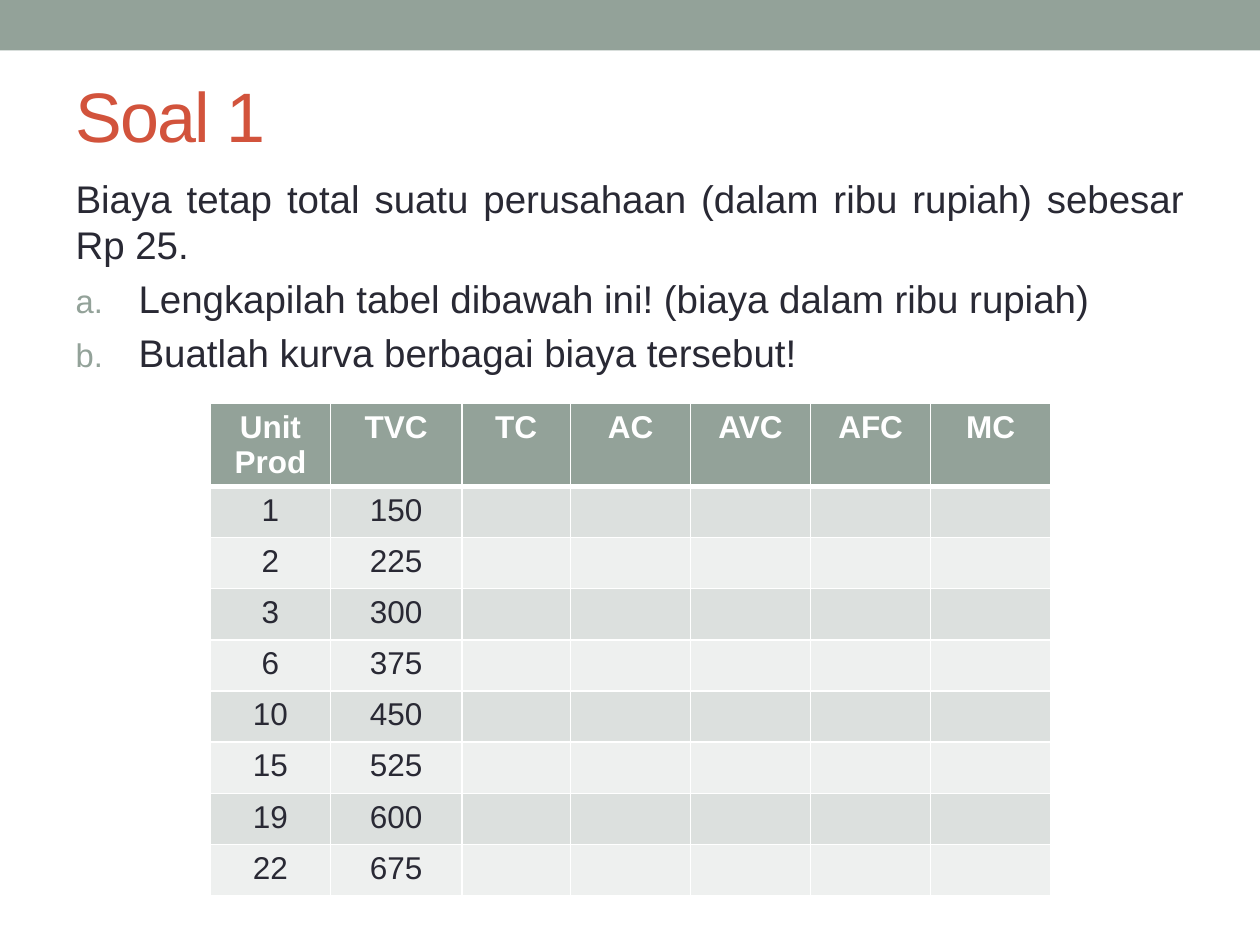
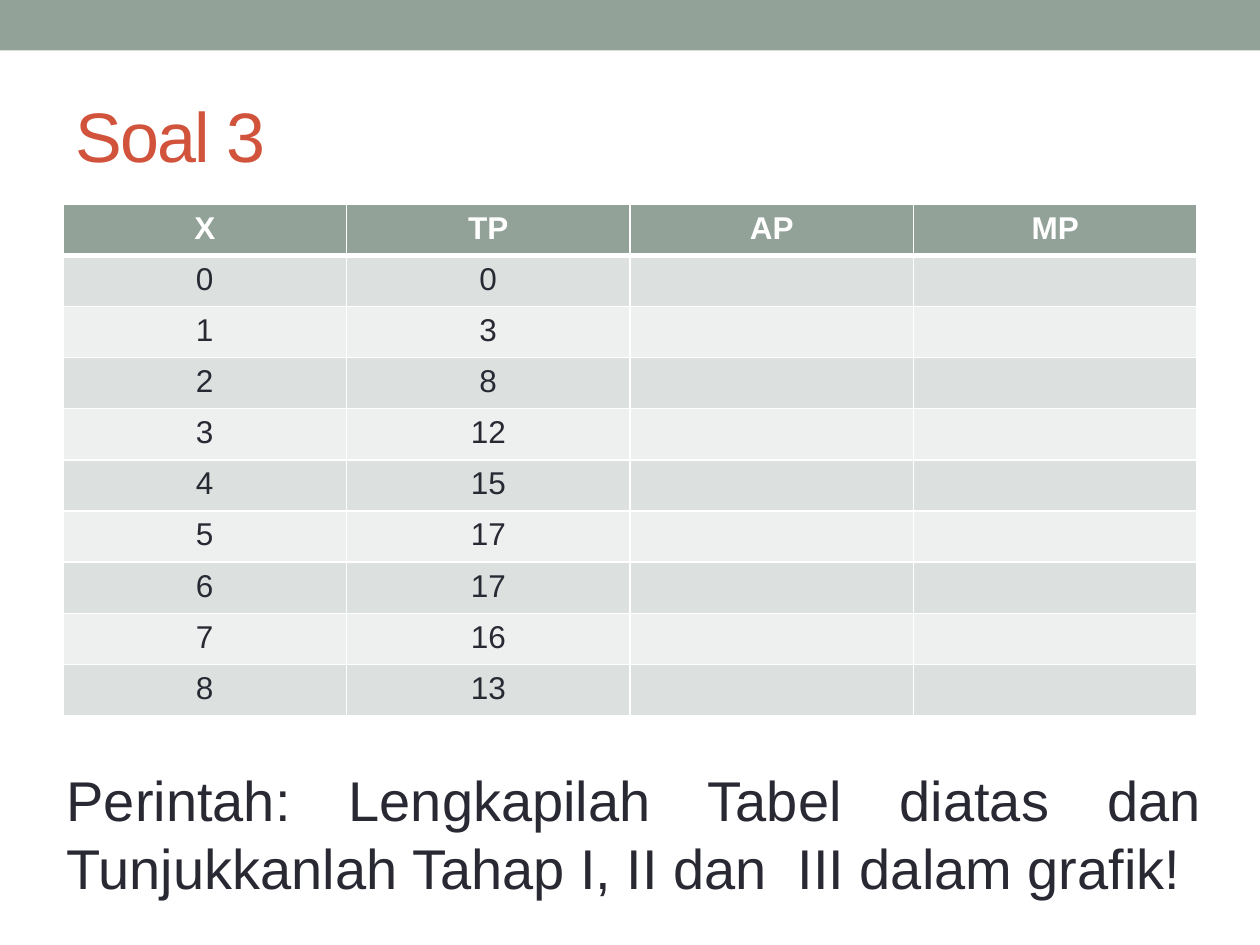
import pptx
import pptx.util
import pptx.dml.color
import pptx.enum.shapes
import pptx.enum.text
import pptx.oxml.ns
import lxml.etree
from dataclasses import dataclass

Inches, Pt = pptx.util.Inches, pptx.util.Pt
Align, Anchor = pptx.enum.text.PP_ALIGN, pptx.enum.text.MSO_ANCHOR
WIDE, HIGH = 10, 7.5
ROW = 4.06 / 10


@dataclass(frozen=True)
class Theme:
    font: str = "Arial"
    sage: str = "93A299"
    red: str = "D2533C"
    ink: str = "292934"
    white: str = "FFFFFF"
    bands: tuple = ("DCE0DE", "EEF0EF")
    title: int = 40
    body: int = 22
    cell: int = 18
    task: int = 32


THEME = Theme()


def color(code):
    return pptx.dml.color.RGBColor.from_string(code)


def area(x, y, w, h):
    """Turn shares of the slide into lengths."""
    return [Inches(v) for v in (x * WIDE, y * HIGH, w * WIDE, h * HIGH)]


def node(parent, tag, **attrs):
    item = lxml.etree.SubElement(parent, pptx.oxml.ns.qn(tag))
    for key, value in attrs.items():
        item.set(key, str(value))
    return item


def place(shape, box):
    shape.left, shape.top, shape.width, shape.height = area(*box)


# Text
def write(para, text, size, tint=THEME.ink, bold=False, align=Align.LEFT,
          track=0, before=None):
    run = para.add_run()
    run.text = text
    run.font.name, run.font.size, run.font.bold = THEME.font, Pt(size), bold
    run.font.color.rgb = color(tint)
    if track:
        run.font._element.set("spc", str(track * 100))
    para.alignment = align
    if before is not None:
        para.space_before = Pt(before)


def mark(para, listed):
    """Letter a list item, or clear the bullet of plain text."""
    props = para._p.get_or_add_pPr()
    indent = Inches(0.5) if listed else 0
    props.set("marL", str(indent))
    props.set("indent", str(-indent))
    if listed:
        node(node(props, "a:buClr"), "a:srgbClr", val=THEME.sage)
        node(props, "a:buSzPct", val=85000)
        node(props, "a:buFont", typeface=THEME.font)
        node(props, "a:buAutoNum", type="alphaLcPeriod")
    else:
        node(props, "a:buNone")


def head(slide, text, top):
    title = slide.shapes.title
    place(title, (0.05, top, 0.9, 0.145))
    frame = title.text_frame
    frame.auto_size = pptx.enum.text.MSO_AUTO_SIZE.NONE
    frame.vertical_anchor = Anchor.MIDDLE
    write(frame.paragraphs[0], text, THEME.title, THEME.red, track=-1)


def body(slide, lead, items):
    holder = slide.placeholders[1]
    place(holder, (0.05, 1.34 / HIGH, 0.9, 5.88 / HIGH))
    frame = holder.text_frame
    frame.auto_size = pptx.enum.text.MSO_AUTO_SIZE.NONE
    for i, text in enumerate([lead, *items]):
        para = frame.add_paragraph() if i else frame.paragraphs[0]
        mark(para, i > 0)
        write(para, text, THEME.body, align=Align.JUSTIFY,
              before=THEME.body * 0.2 if i else 0)


def note(slide, text, box):
    frame = slide.shapes.add_textbox(*area(*box)).text_frame
    frame.word_wrap = True
    write(frame.paragraphs[0], text, THEME.task, align=Align.JUSTIFY)


# Table
def edge(cell, heavy):
    props = cell._tc.get_or_add_tcPr()
    for side in "LRTB":
        width = 3 if side == heavy else 1
        line = node(props, "a:ln" + side, w=Pt(width))
        node(node(line, "a:solidFill"), "a:srgbClr", val=THEME.white)


def grid(slide, names, rows, box, parts):
    """Fill the leading columns and leave the others open for answers."""
    left, top, width, height = area(*box)
    table = slide.shapes.add_table(
        len(rows) + 1, len(names), left, top, width, height).table
    for column, part in zip(table.columns, parts):
        column.width = int(width * part / sum(parts))
    first = height - Inches(ROW) * len(rows)
    for r, values in enumerate([names, *rows]):
        table.rows[r].height = Inches(ROW) if r else first
        for c in range(len(names)):
            cell = table.cell(r, c)
            edge(cell, "T" if r == 1 else "" if r else "B")
            cell.fill.solid()
            cell.fill.fore_color.rgb = color(
                THEME.bands[(r - 1) % 2] if r else THEME.sage)
            if c < len(values):
                write(cell.text_frame.paragraphs[0], str(values[c]),
                      THEME.cell, THEME.ink if r else THEME.white,
                      bold=not r, align=Align.CENTER)


# Shared start of each slide: band behind, title above
def start(deck, layout, text, top):
    slide = deck.slides.add_slide(deck.slide_layouts[layout])
    bar = slide.shapes.add_shape(
        pptx.enum.shapes.MSO_SHAPE.RECTANGLE, *area(0, 0, 1, 0.4 / HIGH))
    bar.shadow.inherit = False
    bar.fill.solid()
    bar.fill.fore_color.rgb = color(THEME.sage)
    bar.line.fill.background()
    slide.shapes.element.insert(2, bar.element)
    head(slide, text, top)
    return slide


def costs(deck):
    slide = start(deck, 1, "Soal 1", 0.049)
    body(slide,
         "Biaya tetap total suatu perusahaan (dalam ribu rupiah) sebesar Rp 25.",
         ["Lengkapilah tabel dibawah ini! (biaya dalam ribu rupiah)",
          "Buatlah kurva berbagai biaya tersebut!"])
    units = (1, 2, 3, 6, 10, 15, 19, 22)
    rows = list(zip(units, range(150, 676, 75)))
    grid(slide, ["Unit Prod", "TVC", "TC", "AC", "AVC", "AFC", "MC"], rows,
         (0.167, 3.2 / HIGH, 0.667, 3.89 / HIGH),
         [0.95, 1.04, 0.86] + [0.95] * 4)


def output(deck):
    slide = start(deck, 5, "Soal 3", 0.07)
    rows = list(enumerate((0, 3, 8, 12, 15, 17, 17, 16, 13)))
    grid(slide, ["X", "TP", "AP", "MP"], rows,
         (0.05, 1.62 / HIGH, 0.9, 4.06 / HIGH), [1] * 4)
    note(slide, "Perintah: Lengkapilah Tabel diatas dan Tunjukkanlah Tahap "
         "I, II dan  III dalam grafik!", (0.043, 6.03 / HIGH, 0.921, 1.18 / HIGH))


def main():
    deck = pptx.Presentation()
    deck.slide_width, deck.slide_height = Inches(WIDE), Inches(HIGH)
    costs(deck)
    output(deck)
    deck.save("out.pptx")


if __name__ == "__main__":
    main()
